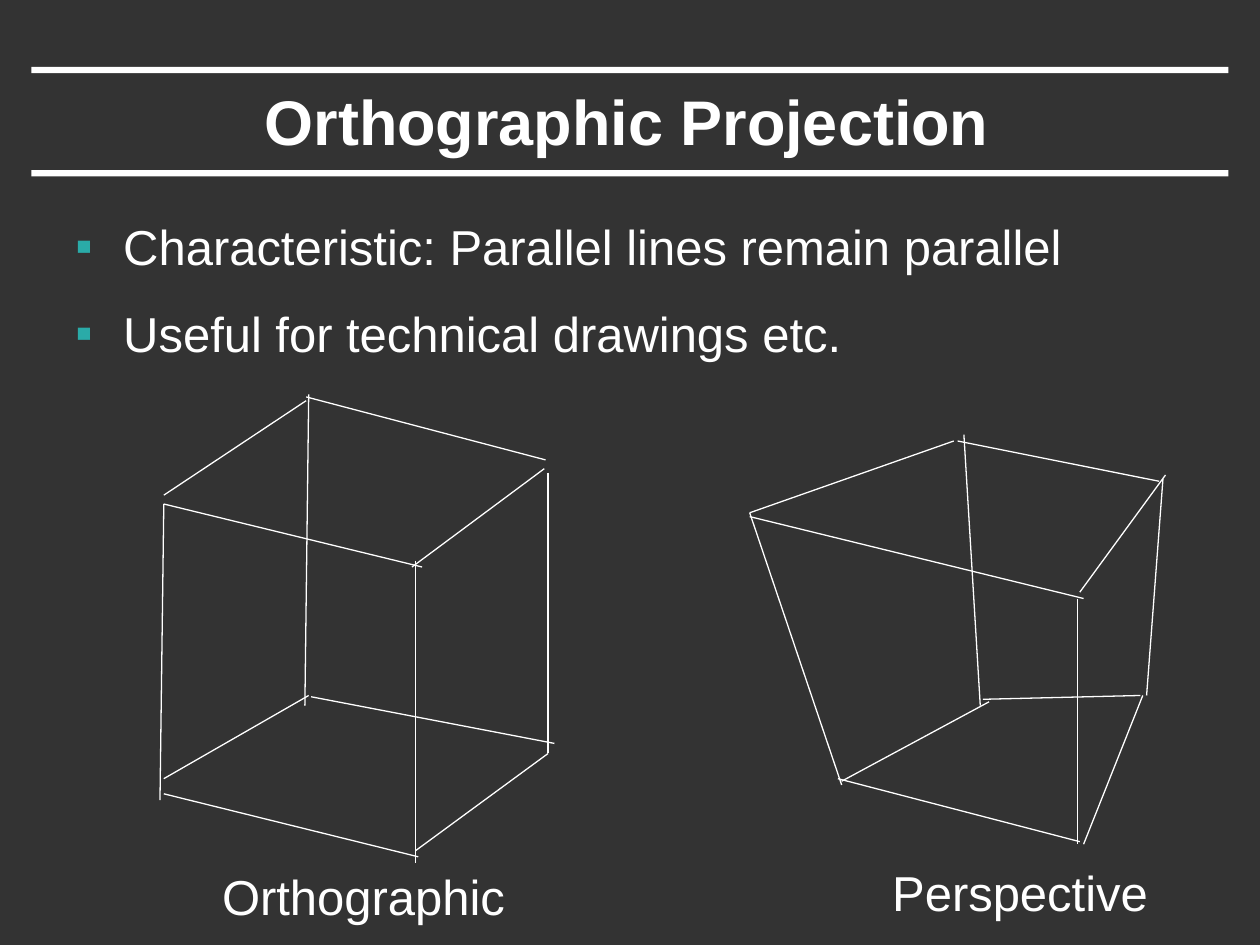
from dataclasses import dataclass
from typing import NamedTuple

from lxml import etree
from pptx import Presentation
from pptx.dml.color import RGBColor
from pptx.enum.shapes import MSO_CONNECTOR, MSO_SHAPE
from pptx.enum.text import MSO_ANCHOR, MSO_AUTO_SIZE, PP_ALIGN
from pptx.oxml.ns import qn
from pptx.util import Emu, Pt

RECT = MSO_SHAPE.RECTANGLE
LINE = MSO_CONNECTOR.STRAIGHT
CENTER = PP_ALIGN.CENTER
MIDDLE = MSO_ANCHOR.MIDDLE
NO_FIT = MSO_AUTO_SIZE.NONE
GROW = MSO_AUTO_SIZE.SHAPE_TO_FIT_TEXT
TITLE_ONLY = 5
SCALE = 9144  # EMU in one px, at 100 px to the inch


@dataclass(frozen=True)
class Theme:
    back: RGBColor = RGBColor(0x33, 0x33, 0x33)
    ink: RGBColor = RGBColor(0xFF, 0xFF, 0xFF)
    mark: str = "2AABA8"
    font: str = "Arial"
    head: int = 36
    text: int = 28
    gap: int = 16
    edge: float = 0.75


class Box(NamedTuple):
    left: int
    top: int
    width: int
    height: int


class Edge(NamedTuple):
    x1: int
    y1: int
    x2: int
    y2: int


@dataclass(frozen=True)
class Cube:
    label: str
    box: Box
    edges: tuple[Edge, ...]


THEME = Theme()
BARS = (Box(25, 135, 950, 5), Box(25, 53, 950, 5))
POINTS = (
    "Characteristic: Parallel lines remain parallel",
    "Useful for technical drawings etc.",
)
CUBES = (
    Cube("Orthographic", Box(165, 683, 247, 57), (
        Edge(130, 400, 335, 450),
        Edge(130, 400, 127, 635),
        Edge(130, 630, 332, 680),
        Edge(330, 445, 330, 685),
        Edge(130, 393, 243, 318),
        Edge(243, 315, 433, 365),
        Edge(327, 450, 432, 372),
        Edge(245, 313, 242, 560),
        Edge(130, 618, 245, 552),
        Edge(435, 375, 435, 598),
        Edge(330, 675, 435, 598),
        Edge(247, 553, 440, 590),
    )),
    Cube("Perspective", Box(697, 680, 225, 57), (
        Edge(595, 410, 860, 475),
        Edge(857, 470, 925, 377),
        Edge(595, 407, 757, 350),
        Edge(760, 350, 920, 382),
        Edge(595, 407, 668, 623),
        Edge(668, 620, 785, 557),
        Edge(765, 345, 778, 560),
        Edge(665, 618, 857, 668),
        Edge(855, 475, 855, 670),
        Edge(780, 555, 905, 552),
        Edge(923, 380, 910, 552),
        Edge(907, 552, 860, 670),
    )),
)


def px(n: int) -> Emu:
    return Emu(n * SCALE)


def place(box: Box) -> list[Emu]:
    return [px(n) for n in box]


def style(para, size: int, bold: bool = False) -> None:
    font = para.font
    font.name, font.size, font.bold = THEME.font, Pt(size), bold
    font.color.rgb = THEME.ink


def bullet(para) -> None:
    """Give the paragraph a square mark and a hanging indent."""
    props = para._p.get_or_add_pPr()
    props.set("marL", str(px(38)))
    props.set("indent", str(px(-38)))
    tint = etree.SubElement(props, qn("a:buClr"))
    etree.SubElement(tint, qn("a:srgbClr"), val=THEME.mark)
    etree.SubElement(props, qn("a:buFont"), typeface=THEME.font)
    etree.SubElement(props, qn("a:buChar"), char="▪")


def draw_bar(slide, box: Box) -> None:
    bar = slide.shapes.add_shape(RECT, *place(box))
    bar.shadow.inherit = False
    bar.fill.solid()
    bar.fill.fore_color.rgb = THEME.ink
    bar.line.fill.background()


def draw_title(slide, text: str, box: Box) -> None:
    title = slide.shapes.title
    title.left, title.top, title.width, title.height = place(box)
    frame = title.text_frame
    frame.text = text
    frame.auto_size = NO_FIT
    frame.vertical_anchor = MIDDLE
    para = frame.paragraphs[0]
    para.alignment = CENTER
    style(para, THEME.head, bold=True)


def draw_list(slide, items: tuple[str, ...], box: Box) -> None:
    frame = slide.shapes.add_textbox(*place(box)).text_frame
    frame.word_wrap = True
    frame.text = "\n".join(items)
    for para in frame.paragraphs:
        para.space_after = Pt(THEME.gap)
        bullet(para)
        style(para, THEME.text)


def draw_edge(slide, edge: Edge) -> None:
    line = slide.shapes.add_connector(LINE, *(px(n) for n in edge))
    line.line.color.rgb = THEME.ink
    line.line.width = Pt(THEME.edge)
    etree.SubElement(line._element.spPr, qn("a:effectLst"))


def draw_cube(slide, cube: Cube) -> None:
    for edge in cube.edges:
        draw_edge(slide, edge)
    frame = slide.shapes.add_textbox(*place(cube.box)).text_frame
    frame.word_wrap = False
    frame.auto_size = GROW
    frame.text = cube.label
    para = frame.paragraphs[0]
    para.alignment = CENTER
    style(para, THEME.text)


def main() -> None:
    deck = Presentation()
    deck.slide_width, deck.slide_height = px(1000), px(750)
    slide = deck.slides.add_slide(deck.slide_layouts[TITLE_ONLY])
    fill = slide.background.fill
    fill.solid()
    fill.fore_color.rgb = THEME.back
    for bar in BARS:
        draw_bar(slide, bar)
    draw_title(slide, "Orthographic Projection", Box(74, 58, 847, 75))
    draw_list(slide, POINTS, Box(50, 167, 900, 550))
    for cube in CUBES:
        draw_cube(slide, cube)
    deck.save("out.pptx")


if __name__ == "__main__":
    main()
